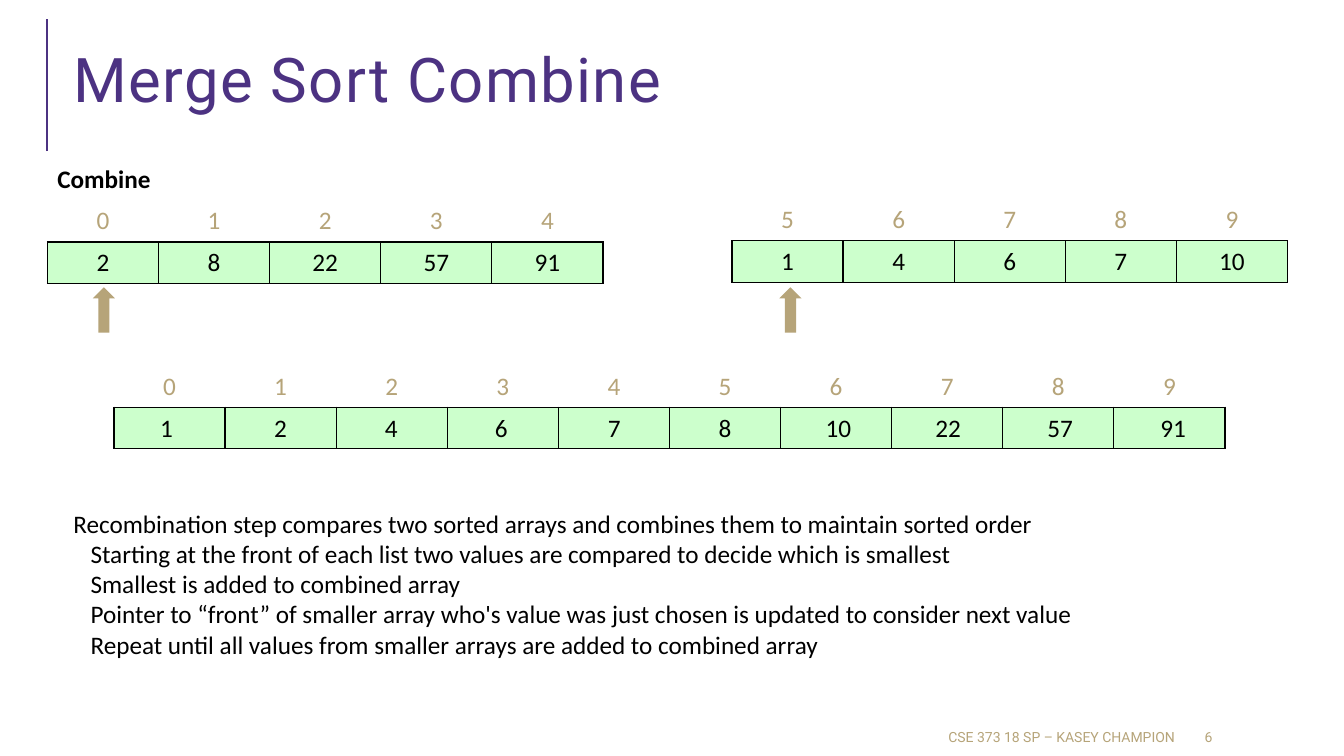
import pptx
import pptx.dml.color
import pptx.enum.shapes
import pptx.enum.text
import pptx.oxml.ns
import pptx.util
from lxml import etree
from pptx.util import Inches

COLORS = {
    "purple": "4C3282",
    "gold": "B6A479",
    "green": "CCFFCC",
    "black": "000000",
    "white": "FFFFFF",
}
COLUMN_WIDTH = Inches(5.51) // 5
ROW_HEIGHT = Inches(0.41)

ARRAYS = [
    (0.47, 1.99, range(0, 5), [2, 8, 22, 57, 91]),
    (7.26, 1.98, range(5, 10), [1, 4, 6, 7, 10]),
    (1.13, 3.63, range(0, 10), [""] * 10),
]
POINTER_LEFTS = [0.92, 7.73]
# Value, left and width of each label over the combined array
MERGED_VALUES = [
    (1, 1.49, 0.33), (2, 2.62, 0.33), (4, 3.72, 0.33), (6, 4.81, 0.33),
    (7, 5.93, 0.33), (8, 7.03, 0.33), (10, 8.09, 0.46), (22, 9.18, 0.46),
    (57, 10.29, 0.51), (91, 11.41, 0.46),
]
SUMMARY = "Recombination step compares two sorted arrays and combines them to maintain sorted order"
STEPS = [
    "Starting at the front of each list two values are compared to decide which is smallest",
    "Smallest is added to combined array",
    "Pointer to “front” of smaller array who's value was just chosen is updated to consider next value",
    "Repeat until all values from smaller arrays are added to combined array",
]


def rgb(name):
    return pptx.dml.color.RGBColor.from_string(COLORS[name])


def write(paragraph, text, size=18, font="Calibri", color="black", bold=False, align="LEFT", indent=0):
    paragraph.alignment = getattr(pptx.enum.text.PP_ALIGN, align)
    if indent:
        paragraph._p.get_or_add_pPr().set("marL", str(Inches(indent)))
    run = paragraph.add_run()
    run.text = str(text)
    run.font.size = pptx.util.Pt(size)
    run.font.name = font
    run.font.bold = bold
    run.font.color.rgb = rgb(color)
    return run


def add_text(slide, left, top, width, height, text, wrap=False, anchor="TOP", **text_format):
    frame = slide.shapes.add_textbox(Inches(left), Inches(top), Inches(width), Inches(height)).text_frame
    frame.word_wrap = wrap
    frame.vertical_anchor = getattr(pptx.enum.text.MSO_ANCHOR, anchor)
    write(frame.paragraphs[0], text, **text_format)
    return frame


def set_border(cell, side, color):
    properties = cell._tc.get_or_add_tcPr()
    border = etree.SubElement(properties, pptx.oxml.ns.qn(f"a:ln{side}"), w=str(pptx.util.Pt(1)))
    fill = etree.SubElement(border, pptx.oxml.ns.qn("a:solidFill"))
    etree.SubElement(fill, pptx.oxml.ns.qn("a:srgbClr"), val=COLORS[color])


def add_array(slide, left, top, indices, values):
    """Draw a row of indices above a row of boxed values."""
    count = len(values)
    table = slide.shapes.add_table(
        2, count, Inches(left), Inches(top), COLUMN_WIDTH * count, ROW_HEIGHT * 2
    ).table
    table.first_row = table.horz_banding = False
    for column in table.columns:
        column.width = COLUMN_WIDTH
    for row_number, contents in enumerate([indices, values]):
        is_index = row_number == 0
        for column_number, content in enumerate(contents):
            cell = table.cell(row_number, column_number)
            cell.vertical_anchor = pptx.enum.text.MSO_ANCHOR.MIDDLE
            write(cell.text_frame.paragraphs[0], content, align="CENTER",
                  color="gold" if is_index else "black")
            for side in "LRTB":
                set_border(cell, side, "white" if is_index and side != "B" else "black")
            if is_index:
                cell.fill.background()
            else:
                cell.fill.solid()
                cell.fill.fore_color.rgb = rgb("green")


def add_pointer(slide, left):
    pointer = slide.shapes.add_shape(
        pptx.enum.shapes.MSO_SHAPE.UP_ARROW, Inches(left), Inches(2.85), Inches(0.22), Inches(0.45)
    )
    pointer.shadow.inherit = False
    pointer.fill.solid()
    pointer.fill.fore_color.rgb = rgb("gold")
    pointer.line.fill.background()


def add_title(slide, text):
    rule = slide.shapes.add_connector(
        pptx.enum.shapes.MSO_CONNECTOR.STRAIGHT, Inches(0.47), Inches(1.5), Inches(0.47), Inches(0.19)
    )
    rule.line.color.rgb = rgb("purple")
    rule.line.width = pptx.util.Pt(1.5)
    etree.SubElement(rule._element.spPr, pptx.oxml.ns.qn("a:effectLst"))

    title = slide.shapes.title
    title.left, title.top, title.width, title.height = map(Inches, (0.63, 0.29, 12.23, 1.11))
    title.text_frame.vertical_anchor = pptx.enum.text.MSO_ANCHOR.MIDDLE
    paragraph = title.text_frame.paragraphs[0]
    paragraph.line_spacing = 0.8
    run = write(paragraph, text, size=44, font="Roboto", color="purple")
    run.font._element.set("spc", "100")


def add_explanation(slide):
    frame = add_text(slide, 0.63, 4.99, 11.47, 1.62, SUMMARY, wrap=True)
    for step in STEPS:
        write(frame.add_paragraph(), step, indent=0.17)


def add_footer(slide):
    footer_format = dict(wrap=True, anchor="MIDDLE", size=10, font="Roboto", color="gold")
    add_text(slide, 5.3, 7.16, 6.45, 0.3, "CSE 373 18 SP – KASEY CHAMPION", align="RIGHT", **footer_format)
    add_text(slide, 11.85, 7.16, 1.06, 0.3, "6", **footer_format)


def main():
    presentation = pptx.Presentation()
    presentation.slide_width, presentation.slide_height = Inches(13.33), Inches(7.5)
    slide = presentation.slides.add_slide(presentation.slide_layouts.get_by_name("Title Only"))

    add_title(slide, "Merge Sort Combine")
    add_text(slide, 0.47, 1.57, 1.19, 0.4, "Combine", bold=True)
    for array in ARRAYS:
        add_array(slide, *array)
    for left in POINTER_LEFTS:
        add_pointer(slide, left)
    for value, left, width in MERGED_VALUES:
        add_text(slide, left, 4.04, width, 0.4, value)
    add_explanation(slide)
    add_footer(slide)
    presentation.save("out.pptx")


if __name__ == "__main__":
    main()
